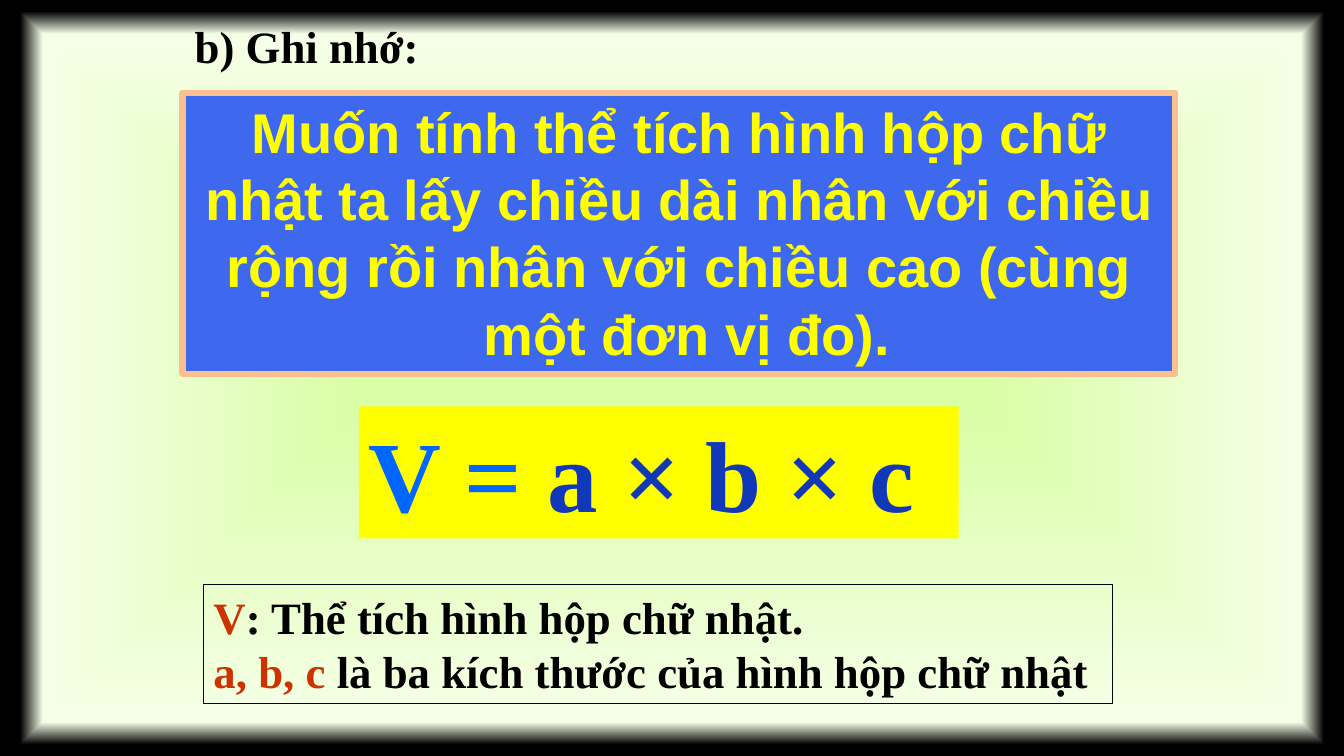
import pptx
import pptx.dml.color
import pptx.enum.shapes
import pptx.enum.text
import pptx.oxml
import pptx.oxml.ns
import pptx.util
from lxml import etree

Pt = pptx.util.Pt
RGBColor = pptx.dml.color.RGBColor
Align = pptx.enum.text.PP_ALIGN

BLACK = RGBColor(0x00, 0x00, 0x00)
YELLOW = RGBColor(0xFF, 0xFF, 0x00)
BRIGHT_BLUE = RGBColor(0x00, 0x66, 0xFF)
DEEP_BLUE = RGBColor(0x10, 0x38, 0xB8)
BOX_BLUE = RGBColor(0x3E, 0x68, 0xEE)
PEACH = RGBColor(0xFA, 0xC0, 0x90)
RED = RGBColor(0xCC, 0x33, 0x00)
FRAME = RGBColor(0x00, 0x08, 0x10)
GREEN = RGBColor(0xDA, 0xFD, 0xA7)
PALE_GREEN = RGBColor(0xF5, 0xFF, 0xE7)

SERIF = "Times New Roman"


def set_background(slide, stops):
    """Fill the background with a gradient that spreads from the centre."""
    fill = slide.background.fill
    fill.gradient()
    gradient = slide.background._cSld.find(".//" + pptx.oxml.ns.qn("a:gradFill"))
    stop_xml = "".join(
        f'<a:gs pos="{percent * 1000}"><a:srgbClr val="{color}"/></a:gs>'
        for percent, color in stops)
    new_gradient = pptx.oxml.parse_xml(
        f'<a:gradFill {pptx.oxml.ns.nsdecls("a")} rotWithShape="1">'
        f'<a:gsLst>{stop_xml}</a:gsLst><a:path path="shape">'
        '<a:fillToRect l="50000" t="50000" r="50000" b="50000"/>'
        '</a:path></a:gradFill>')
    gradient.getparent().replace(gradient, new_gradient)


def set_space_before(paragraph, percent):
    """Set the space above a paragraph as a share of its line height."""
    paragraph.space_before = Pt(0)
    spacing = paragraph._p.pPr.find(pptx.oxml.ns.qn("a:spcBef"))
    spacing.remove(spacing[0])
    share = etree.SubElement(spacing, pptx.oxml.ns.qn("a:spcPct"))
    share.set("val", str(percent * 1000))


def write_text(shape, paragraphs, *, size, font=SERIF, align=Align.LEFT, space_before=0):
    """Write paragraphs, each a list of (text, color) runs."""
    frame = shape.text_frame
    frame.word_wrap = True
    frame.auto_size = pptx.enum.text.MSO_AUTO_SIZE.NONE
    frame.vertical_anchor = pptx.enum.text.MSO_ANCHOR.TOP
    for index, runs in enumerate(paragraphs):
        paragraph = frame.add_paragraph() if index else frame.paragraphs[0]
        paragraph.alignment = align
        if space_before and index == 0:
            set_space_before(paragraph, space_before)
        for text, color in runs:
            run = paragraph.add_run()
            run.text = text
            run.font.name = font
            run.font.size = Pt(size)
            run.font.bold = True
            run.font.color.rgb = color


def add_box(slide, left, top, width, height, *, fill=None, line=None, line_width=0.75):
    shape = slide.shapes.add_shape(
        pptx.enum.shapes.MSO_SHAPE.RECTANGLE, Pt(left), Pt(top), Pt(width), Pt(height))
    shape.shadow.inherit = False
    if fill is None:
        shape.fill.background()
    else:
        shape.fill.solid()
        shape.fill.fore_color.rgb = fill
    if line is None:
        shape.line.fill.background()
    else:
        shape.line.color.rgb = line
        shape.line.width = Pt(line_width)
    return shape


def place_title(slide, left, top, width, height):
    title = slide.shapes.title
    title.left, title.top = Pt(left), Pt(top)
    title.width, title.height = Pt(width), Pt(height)
    return title


def main():
    presentation = pptx.Presentation()
    presentation.slide_width = Pt(960)
    presentation.slide_height = Pt(540)
    slide = presentation.slides.add_slide(presentation.slide_layouts[5])
    set_background(slide, [(8, GREEN), (91, PALE_GREEN), (97, BLACK)])

    title = place_title(slide, 131.8, 9.4, 184.3, 46)
    write_text(title, [[("b) Ghi nhớ:", BLACK)]], size=32)

    formula = add_box(slide, 256.3, 290.2, 428.4, 94.3, fill=YELLOW)
    write_text(formula, [[("V = ", BRIGHT_BLUE), ("a × b × c", DEEP_BLUE)]],
               size=72, space_before=50)

    legend = add_box(slide, 145.4, 417.6, 649.4, 85, line=FRAME)
    write_text(legend, [
        [("V", RED), (": Thể tích hình hộp chữ nhật.", BLACK)],
        [("a, b, c ", RED), ("là ba kích thước của hình hộp chữ nhật", BLACK)],
    ], size=32)

    rule = add_box(slide, 130.3, 66.2, 709.2, 200.9, fill=BOX_BLUE, line=PEACH, line_width=4.5)
    write_text(rule, [
        [("Muốn tính thể tích hình hộp chữ nhật ta lấy chiều dài nhân với chiều "
          "rộng rồi nhân với chiều cao (cùng", YELLOW)],
        [(" một đơn vị đo).", YELLOW)],
    ], size=40, font="Arial", align=Align.CENTER, space_before=50)

    presentation.save("out.pptx")


if __name__ == "__main__":
    main()
